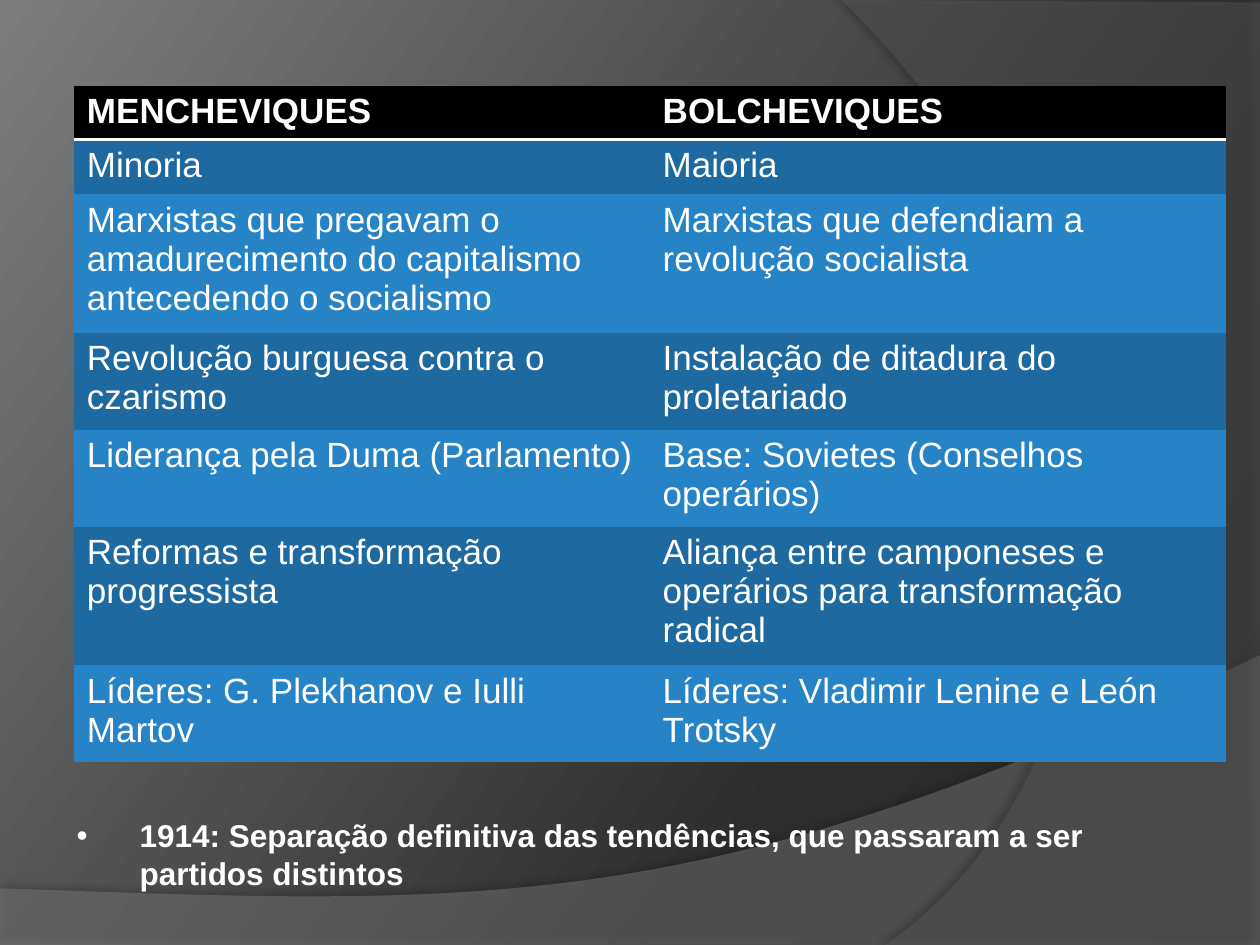
from lxml import etree
from pptx import Presentation
from pptx.dml.color import RGBColor
from pptx.enum.text import MSO_AUTO_SIZE
from pptx.oxml import parse_xml
from pptx.oxml.ns import qn
from pptx.util import Inches, Pt

GROW = MSO_AUTO_SIZE.SHAPE_TO_FIT_TEXT
NS = 'xmlns:a="http://schemas.openxmlformats.org/drawingml/2006/main"'
PLAIN = "{2D5ABB26-0587-4C30-8999-92F81FD0307C}"  # table style without grid
COLORS = {
    "white": "FFFFFF", "head": "000000", "odd": "1E699F", "even": "2683C6",
    "wave": "7F7F7F", "arc": "5E5E5E", "shade": "000000",
}
STOPS = [(0, "242424"), (30, "2D2D2D"), (100, "7D7D7D")]
ROWS = [
    (0.43, "MENCHEVIQUES", "BOLCHEVIQUES"),
    (0.43, "Minoria", "Maioria"),
    (1.1, "Marxistas que pregavam o amadurecimento do capitalismo antecedendo o socialismo",
     "Marxistas que defendiam a revolução socialista"),
    (0.77, "Revolução burguesa contra o czarismo", "Instalação de ditadura do proletariado"),
    (0.77, "Liderança pela Duma (Parlamento)", "Base: Sovietes (Conselhos operários)"),
    (1.1, "Reformas e transformação progressista",
     "Aliança entre camponeses e operários para transformação radical"),
    (0.77, "Líderes: G. Plekhanov e Iulli Martov", "Líderes: Vladimir Lenine e León Trotsky"),
]
NOTE = "1914: Separação definitiva das tendências, que passaram a ser partidos distintos"


def rgb(name):
    return RGBColor.from_string(COLORS[name])


def style(run, size, bold):
    look = {"name": "Arial", "size": Pt(size), "bold": bold}
    for key, val in look.items():
        setattr(run.font, key, val)
    run.font.color.rgb = rgb("white")


def paint_back(slide):
    slide.background.fill.gradient()
    grad = slide.background._cSld.find(".//" + qn("a:gradFill"))
    stops = "".join(
        f'<a:gs pos="{pos * 1000}"><a:srgbClr val="{hue}"/></a:gs>' for pos, hue in STOPS)
    new = parse_xml(f'<a:gradFill {NS} rotWithShape="1"><a:gsLst>{stops}</a:gsLst>'
                    f'<a:lin ang="{216 * 60000}" scaled="0"/></a:gradFill>')
    grad.getparent().replace(grad, new)


def curve(a, b, c, d, steps=48):
    """Points along a cubic curve, without its start."""
    pts = []
    for i in range(1, steps + 1):
        t = i / steps
        u = 1 - t
        pts.append(tuple(u**3 * p + 3 * u * u * t * q + 3 * u * t * t * r + t**3 * s
                         for p, q, r, s in zip(a, b, c, d)))
    return pts


def add_sweep(slide, pts, color, alpha, shade):
    pts = [(Inches(x), Inches(y)) for x, y in pts]
    form = slide.shapes.build_freeform(*pts[0], scale=1.0)
    form.add_line_segments(pts[1:], close=True)
    shape = form.convert_to_shape()
    shape.fill.solid()
    shape.fill.fore_color.rgb = rgb(color)
    shape.line.fill.background()
    hue = shape._element.spPr.find(".//" + qn("a:srgbClr"))
    etree.SubElement(hue, qn("a:alpha"), val=str(alpha * 1000))
    dark, blur, dist, turn = shade
    shape._element.spPr.append(parse_xml(
        f'<a:effectLst {NS}><a:outerShdw blurRad="{Pt(blur)}" dist="{Pt(dist)}" '
        f'dir="{turn * 60000}" algn="ctr" rotWithShape="0">'
        f'<a:srgbClr val="{COLORS["shade"]}"><a:alpha val="{dark * 1000}"/></a:srgbClr>'
        f'</a:outerShdw></a:effectLst>'))


def add_grid(slide):
    high = sum(row[0] for row in ROWS)
    frame = slide.shapes.add_table(len(ROWS), 2, Inches(0.59), Inches(0.68),
                                   Inches(9.14), Inches(high))
    table = frame.table
    table._tbl.tblPr.find(qn("a:tableStyleId")).text = PLAIN
    for i, (tall, *texts) in enumerate(ROWS):
        table.rows[i].height = Inches(tall)
        fill = "head" if i == 0 else "odd" if i % 2 else "even"
        for j, text in enumerate(texts):
            cell = table.cell(i, j)
            cell.fill.solid()
            cell.fill.fore_color.rgb = rgb(fill)
            run = cell.text_frame.paragraphs[0].add_run()
            run.text = text
            style(run, 20, i == 0)
            if i == 0:
                cell._tc.tcPr.insert(0, parse_xml(
                    f'<a:lnB {NS} w="{Pt(2)}"><a:solidFill>'
                    f'<a:srgbClr val="{COLORS["white"]}"/></a:solidFill></a:lnB>'))


def add_note(slide):
    box = slide.shapes.add_textbox(Inches(0.51), Inches(6.43), Inches(8.98), Inches(0.71))
    frame = box.text_frame
    frame.word_wrap = True
    frame.auto_size = GROW
    par = frame.paragraphs[0]
    run = par.add_run()
    run.text = NOTE
    style(run, 18, True)
    props = par._p.get_or_add_pPr()
    props.set("marL", str(Inches(0.5)))
    props.set("indent", str(Inches(-0.5)))
    etree.SubElement(props, qn("a:buFont"), typeface="Arial")
    etree.SubElement(props, qn("a:buChar"), char="•")


def main():
    deck = Presentation()
    deck.slide_width, deck.slide_height = Inches(10), Inches(7.5)
    slide = deck.slides.add_slide(deck.slide_layouts[6])
    # Backdrop with two translucent sweeps
    paint_back(slide)
    wave = [(0, 7.05), (0, 7.51), (10, 7.51), (10, 5.2)]
    wave += curve((10, 5.2), (5.59, 7.29), (3.91, 7.19), (0, 7.05))
    add_sweep(slide, wave, "wave", 45, (35, 4, 3.5, 270))
    arc = [(10, 0.02), (10, 7.5), (7.03, 7.5)]
    arc += curve((7.03, 7.5), (8.91, 6.19), (9.47, 2.75), (6.68, 0))
    add_sweep(slide, arc, "arc", 40, (45, 4, 4, 180))
    # Comparison and closing remark
    add_grid(slide)
    add_note(slide)
    deck.save("out.pptx")


if __name__ == "__main__":
    main()
